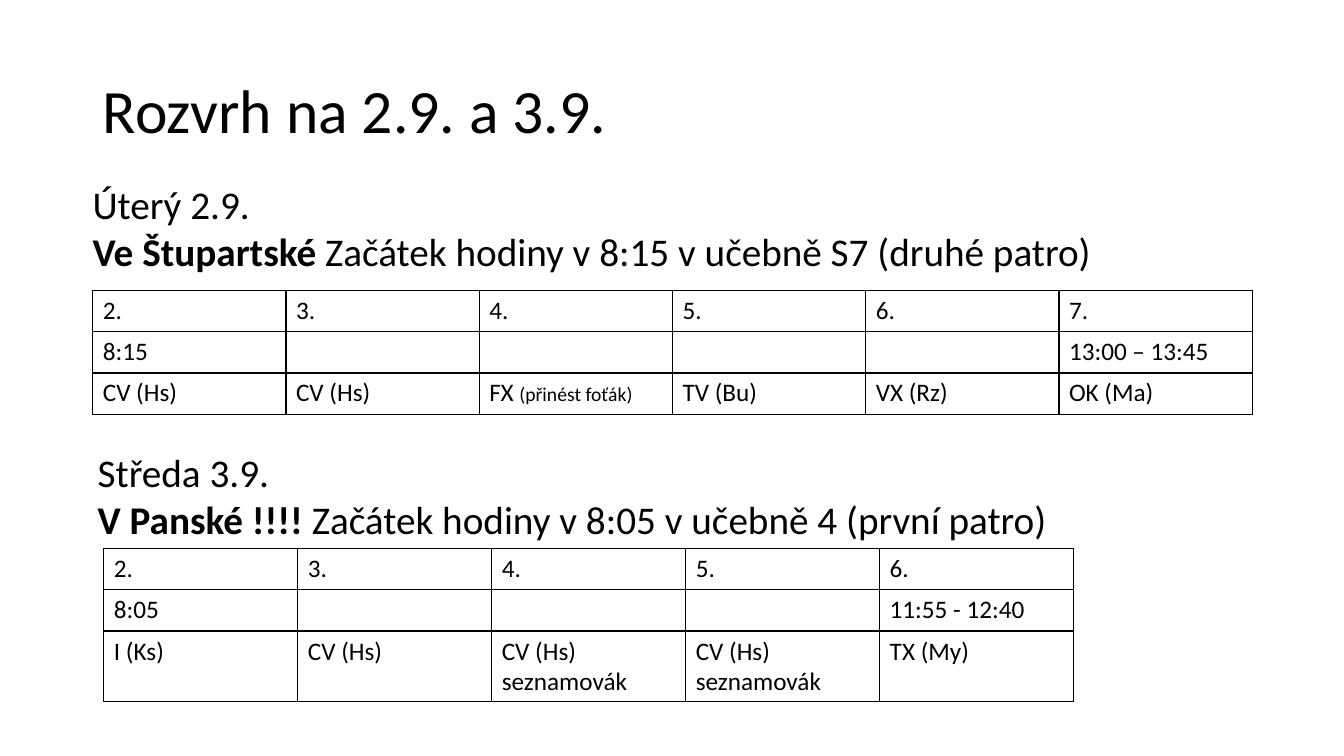
from lxml.etree import SubElement
from pptx import Presentation
from pptx.dml.color import RGBColor as RGB
from pptx.enum.text import MSO_ANCHOR as Anchor, MSO_AUTO_SIZE as AutoSize, PP_ALIGN as Align
from pptx.oxml.ns import qn
from pptx.util import Inches, Pt

COLORS = {"text": "000000", "border": "000000", "back": "FFFFFF"}
FONT = "Calibri"


class Page:
    def __init__(self, prs):
        self.s = prs.slides.add_slide(prs.slide_layouts[5])
        fill = self.s.background.fill
        fill.solid()
        fill.fore_color.rgb = RGB.from_string(COLORS["back"])

    def apply(self, obj, values):
        for name, value in values.items():
            setattr(obj, name, value)

    def run(self, p, text, size, bold=False):
        r = p.add_run()
        r.text = text
        self.apply(r.font, {"name": FONT, "size": Pt(size), "bold": bold})
        r.font.color.rgb = RGB.from_string(COLORS["text"])

    def title(self, text, left, top, width, height):
        sp = self.s.shapes.title
        self.apply(sp, {"left": Inches(left), "top": Inches(top),
                        "width": Inches(width), "height": Inches(height)})
        self.apply(sp.text_frame, {"vertical_anchor": Anchor.MIDDLE, "word_wrap": True,
                                   "auto_size": AutoSize.NONE})
        p = sp.text_frame.paragraphs[0]
        self.apply(p, {"alignment": Align.LEFT, "line_spacing": 0.9})
        self.run(p, text, 44)

    def day(self, name, place, start, left, top):
        sp = self.s.shapes.add_textbox(Inches(left), Inches(top), Inches(11.59), Inches(1.04))
        tf = sp.text_frame
        self.apply(tf, {"word_wrap": True, "auto_size": AutoSize.SHAPE_TO_FIT_TEXT})
        self.run(tf.paragraphs[0], name, 28)
        p = tf.add_paragraph()
        self.run(p, place + " ", 28, True)
        self.run(p, start, 28)

    def border(self, cell):
        tc_pr = cell._tc.get_or_add_tcPr()
        for i, side in enumerate(("lnL", "lnR", "lnT", "lnB")):
            ln = SubElement(tc_pr, qn("a:" + side), w=str(Pt(1)))
            fill = SubElement(ln, qn("a:solidFill"))
            SubElement(fill, qn("a:srgbClr"), val=COLORS["border"])
            tc_pr.insert(i, ln)

    def table(self, rows, left, top, width, heights):
        frame = self.s.shapes.add_table(len(rows), len(rows[0]), Inches(left), Inches(top),
                                        Inches(width), Inches(sum(heights)))
        table = frame.table
        self.apply(table, {"first_row": False, "horz_banding": False})
        for col in table.columns:
            col.width = Inches(width / len(rows[0]))
        for i, (row, height) in enumerate(zip(rows, heights)):
            table.rows[i].height = Inches(height)
            for j, text in enumerate(row):
                cell = table.cell(i, j)
                cell.fill.background()
                self.border(cell)
                p = cell.text_frame.paragraphs[0]
                p.font.size = Pt(18)
                main, bracket, note = text.partition("(přinést")
                if main:
                    self.run(p, main, 18)
                if note:
                    self.run(p, bracket + note, 14)


def main():
    prs = Presentation()
    prs.slide_width, prs.slide_height = Inches(13.33), Inches(7.5)
    page = Page(prs)
    page.title("Rozvrh na 2.9. a 3.9.", 0.92, 0.4, 11.5, 1.45)
    page.table([
        ["2.", "3.", "4.", "5.", "6.", "7."],
        ["8:15", "", "", "", "", "13:00 – 13:45"],
        ["CV (Hs)", "CV (Hs)", "FX (přinést foťák)", "TV (Bu)", "VX (Rz)", "OK (Ma)"],
    ], 0.92, 2.88, 11.5, [0.41, 0.41, 0.41])
    page.day("Úterý 2.9.", "Ve Štupartské",
             "Začátek hodiny v 8:15 v učebně S7 (druhé patro)", 0.82, 1.74)
    page.day("Středa 3.9.", "V Panské !!!!",
             "Začátek hodiny v 8:05 v učebně 4 (první patro)", 0.87, 4.4)
    page.table([
        ["2.", "3.", "4.", "5.", "6."],
        ["8:05", "", "", "", "11:55 - 12:40"],
        ["I (Ks)", "CV (Hs)", "CV (Hs) seznamovák", "CV (Hs) seznamovák", "TX (My)"],
    ], 1.03, 5.44, 9.62, [0.41, 0.41, 0.7])
    prs.save("out.pptx")


if __name__ == "__main__":
    main()
